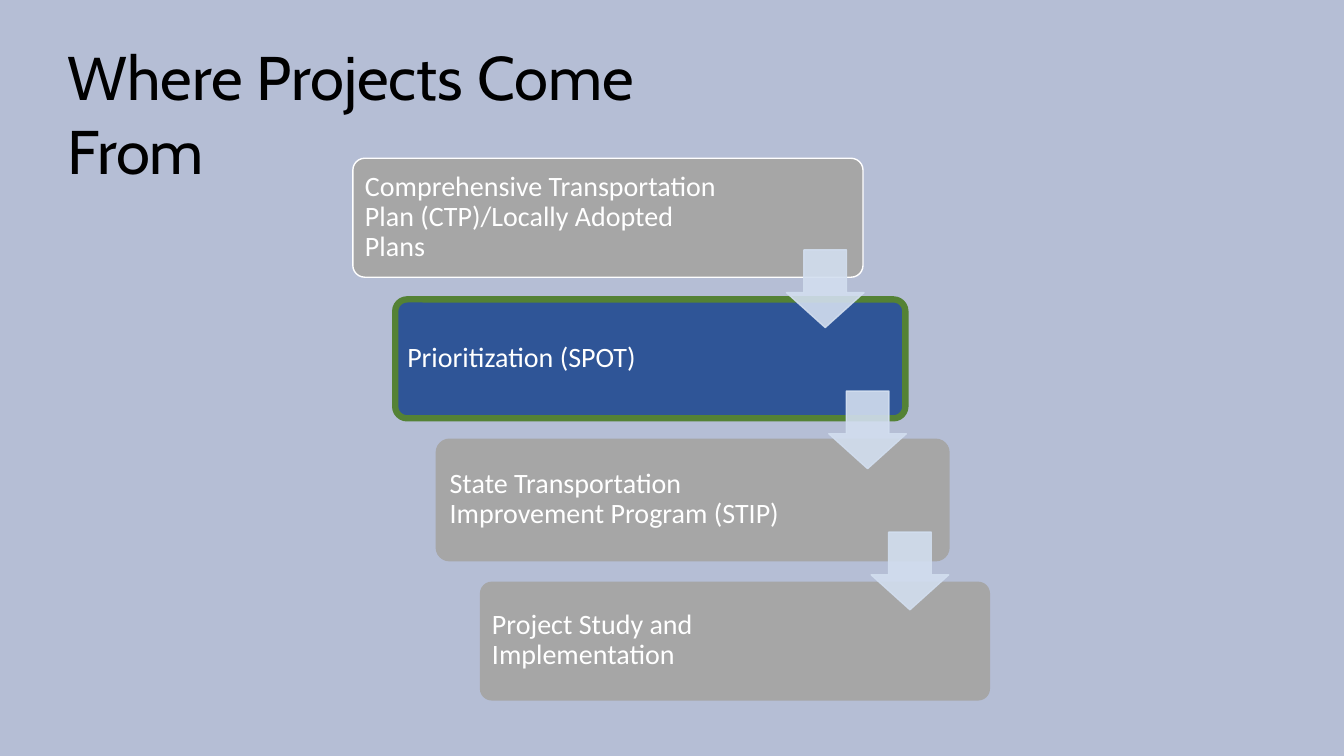
import pptx
import pptx.util
import pptx.dml.color
import pptx.enum.shapes
import pptx.enum.text
import pptx.oxml
import pptx.oxml.ns
from dataclasses import dataclass

Inches = pptx.util.Inches
Pt = pptx.util.Pt
Shape = pptx.enum.shapes.MSO_SHAPE
Anchor = pptx.enum.text.MSO_ANCHOR
Align = pptx.enum.text.PP_ALIGN
Fit = pptx.enum.text.MSO_AUTO_SIZE


@dataclass
class Theme:
    back: str = "B5BED5"
    ink: str = "000000"
    white: str = "FFFFFF"
    gray: str = "A6A6A6"
    blue: str = "2F5597"
    green: str = "548235"
    pale: str = "D2DEEF"
    head: str = "Cabin"
    body: str = "Calibri"
    big: int = 44
    small: int = 20


def rgb(code):
    return pptx.dml.color.RGBColor.from_string(code)


def apply(item, values):
    for name, value in values.items():
        setattr(item, name, value)


class Deck:
    def __init__(self, theme):
        self.theme = theme
        self.file = pptx.Presentation()
        apply(self.file, {"slide_width": Inches(13.33), "slide_height": Inches(7.5)})
        self.slide = self.file.slides.add_slide(self.file.slide_layouts[5])
        fill = self.slide.background.fill
        fill.solid()
        fill.fore_color.rgb = rgb(theme.back)

    def label(self, frame, text, font, size, color, frame_set, para_set):
        apply(frame, {"word_wrap": True, "auto_size": Fit.NONE, **frame_set})
        para = frame.paragraphs[0]
        para.text = text
        apply(para, {"alignment": Align.LEFT, **para_set})
        apply(para.font, {"name": font, "size": Pt(size)})
        para.font.color.rgb = rgb(color)

    def title(self, text, left, top, width, height):
        box = self.slide.shapes.title
        apply(box, {"left": Inches(left), "top": Inches(top),
                    "width": Inches(width), "height": Inches(height)})
        self.label(box.text_frame, text, self.theme.head, self.theme.big,
                   self.theme.ink, {"vertical_anchor": Anchor.TOP}, {})

    def text(self, text, left, top, width, height):
        box = self.slide.shapes.add_textbox(*map(Inches, (left, top, width, height)))
        pad = Inches(0.08)
        self.label(box.text_frame, text, self.theme.body, self.theme.small,
                   self.theme.white,
                   {"vertical_anchor": Anchor.MIDDLE, "margin_left": pad,
                    "margin_right": pad, "margin_top": pad, "margin_bottom": pad},
                   {"line_spacing": 0.9})

    def shape(self, kind, place, bends, color, edge=None, alpha=None):
        item = self.slide.shapes.add_shape(kind, *map(Inches, place))
        item.shadow.inherit = False
        for spot, bend in enumerate(bends):
            item.adjustments[spot] = bend
        item.fill.solid()
        item.fill.fore_color.rgb = rgb(color)
        if edge:
            item.line.color.rgb = rgb(edge[0])
            item.line.width = Pt(edge[1])
        else:
            item.line.fill.background()
        if alpha:
            for node in item._element.spPr.iter(pptx.oxml.ns.qn("a:srgbClr")):
                part = pptx.oxml.parse_xml(
                    f'<a:alpha {pptx.oxml.ns.nsdecls("a")} val="{alpha * 1000}"/>')
                node.append(part)


def main():
    theme = Theme()
    deck = Deck(theme)
    deck.title("Where Projects Come From", 0.57, 0.34, 7.03, 1.14)

    # Steps: label, label width, fill, outline
    steps = [
        ("Comprehensive Transportation Plan (CTP)/Locally Adopted Plans",
         3.68, theme.gray, (theme.white, 1)),
        ("Prioritization (SPOT)", 3.8, theme.blue, (theme.green, 4.5)),
        ("State Transportation Improvement Program (STIP)",
         3.8, theme.gray, (theme.gray, 2.75)),
        ("Project Study and Implementation", 3.8, theme.gray, None),
    ]
    right, down = 0.42, 1.4

    # Staircase of boxes
    for i, (label, wide, color, edge) in enumerate(steps):
        left, top = 3.5 + i * right, 1.57 + i * down
        deck.shape(Shape.ROUNDED_RECTANGLE, (left, top, 5.06, 1.18), [0.1], color, edge)
        deck.text(label, left + 0.04, top + 0.03, wide, 1.11)

    # Arrows from each step to the next
    for i in range(len(steps) - 1):
        deck.shape(Shape.DOWN_ARROW, (7.8 + i * right, 2.48 + i * down, 0.77, 0.77),
                   [0.55, 0.45], theme.pale, (theme.pale, 1), 90)

    deck.file.save("out.pptx")


if __name__ == "__main__":
    main()
